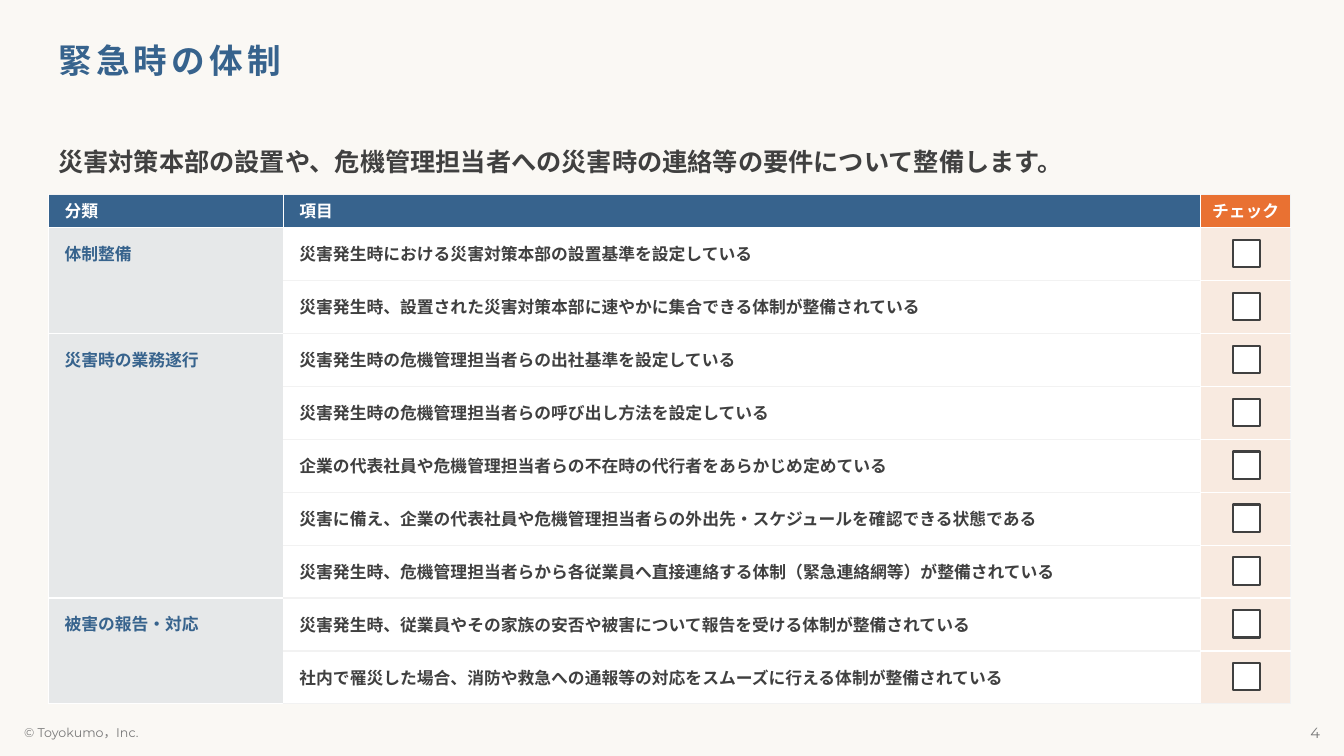
from itertools import accumulate

from lxml import etree
from pptx import Presentation
from pptx import util as u
from pptx.dml import color
from pptx.enum import shapes, text
from pptx.oxml import ns

FONT = "Montserrat"
COLORS = {
    "page": "FAF8F4", "blue": "37638D", "orange": "E97132", "ink": "404040",
    "grey": "797979", "white": "FFFFFF", "rule": "F2F2F2",
}
COLUMNS = [2.33, 9.1, 0.89]
HEADER_HEIGHT, ROW_HEIGHT = 0.33, 0.525
HEADERS = ["分類", "項目", "チェック"]
CHECKLIST = {
    "体制整備": [
        "災害発生時における災害対策本部の設置基準を設定している",
        "災害発生時、設置された災害対策本部に速やかに集合できる体制が整備されている",
    ],
    "災害時の業務遂行": [
        "災害発生時の危機管理担当者らの出社基準を設定している",
        "災害発生時の危機管理担当者らの呼び出し方法を設定している",
        "企業の代表社員や危機管理担当者らの不在時の代行者をあらかじめ定めている",
        "災害に備え、企業の代表社員や危機管理担当者らの外出先・スケジュールを確認できる状態である",
        "災害発生時、危機管理担当者らから各従業員へ直接連絡する体制（緊急連絡網等）が整備されている",
    ],
    "被害の報告・対応": [
        "災害発生時、従業員やその家族の安否や被害について報告を受ける体制が整備されている",
        "社内で罹災した場合、消防や救急への通報等の対応をスムーズに行える体制が整備されている",
    ],
}


def rgb(name):
    return color.RGBColor.from_string(COLORS[name])


def write(frame, words, size=12, ink="ink", bold=True, align=None, tracking=None, leading=None):
    """Fill a text frame with one formatted paragraph."""
    para = frame.paragraphs[0]
    if align:
        para.alignment = align
    if leading:
        para.line_spacing = leading
    span = para.add_run()
    span.text = words
    span.font.name, span.font.size, span.font.bold = FONT, u.Pt(size), bold
    span.font.color.rgb = rgb(ink)
    properties = span.font._element
    etree.SubElement(properties, ns.qn("a:ea"), typeface=FONT)
    if tracking:
        properties.set("spc", str(tracking * 100))


def add_text(page, box, words, margin_top=0.05, **style):
    frame = page.shapes.add_textbox(*map(u.Inches, box)).text_frame
    frame.word_wrap = True
    frame.vertical_anchor = text.MSO_ANCHOR.MIDDLE
    frame.margin_top = u.Inches(margin_top)
    write(frame, words, **style)


def set_borders(cell, left, right, top, bottom):
    properties = cell._tc.get_or_add_tcPr()
    for side, name in zip("LRTB", (left, right, top, bottom)):
        line = etree.SubElement(properties, ns.qn(f"a:ln{side}"), w=str(u.Pt(1)))
        fill = etree.SubElement(line, ns.qn("a:solidFill"))
        etree.SubElement(fill, ns.qn("a:srgbClr"), val=COLORS[name])


def fill_cell(cell, name, percent=100):
    cell.fill.solid()
    cell.fill.fore_color.rgb = rgb(name)
    if percent < 100:
        tint = cell._tc.tcPr.find(".//" + ns.qn("a:solidFill") + "[last()]/" + ns.qn("a:srgbClr"))
        tint = cell._tc.tcPr.find(ns.qn("a:solidFill")).find(ns.qn("a:srgbClr"))
        etree.SubElement(tint, ns.qn("a:alpha"), val=str(percent * 1000))


def set_margins(cell, left, top, right, bottom):
    cell.margin_left, cell.margin_top = u.Inches(left), u.Inches(top)
    cell.margin_right, cell.margin_bottom = u.Inches(right), u.Inches(bottom)


def add_checkbox(page, left, top, size=0.27):
    box = page.shapes.add_shape(shapes.MSO_SHAPE.ROUNDED_RECTANGLE,
                                *map(u.Inches, (left, top, size, size)))
    box.adjustments[0] = 0
    box.shadow.inherit = False
    box.fill.solid()
    box.fill.fore_color.rgb = rgb("white")
    box.line.color.rgb = rgb("ink")
    box.line.width = u.Pt(1.5)


def add_checklist(page, left, top):
    items = [item for group in CHECKLIST.values() for item in group]
    last = len(items)
    height = HEADER_HEIGHT + ROW_HEIGHT * last
    table = page.shapes.add_table(last + 1, len(COLUMNS), *map(
        u.Inches, (left, top, sum(COLUMNS), height))).table
    table.first_row = table.horz_banding = False
    for column, width in zip(table.columns, COLUMNS):
        column.width = u.Inches(width)
    for number, row in enumerate(table.rows):
        row.height = u.Inches(ROW_HEIGHT if number else HEADER_HEIGHT)

    # Cell borders and fills
    for number in range(last + 1):
        for index, name in enumerate(["blue", "white", "orange"]):
            cell = table.cell(number, index)
            inner = "rule" if index == 1 else "white"
            set_borders(
                cell, "white", "rule" if index == 2 else "white",
                "rule" if number == 0 else "white" if number == 1 else inner,
                "rule" if number == last else "white" if number == 0 else inner)
            if number == 0:
                fill_cell(cell, "orange" if index == 2 else "blue")
            else:
                fill_cell(cell, name, 100 if index == 1 else 10)

    # Header row
    for index, words in enumerate(HEADERS):
        cell = table.cell(0, index)
        cell.vertical_anchor = text.MSO_ANCHOR.MIDDLE
        set_margins(cell, 0.1 if index == 2 else 0.16, 0.05, 0.1, 0.05)
        write(cell.text_frame, words, ink="white",
              align=text.PP_ALIGN.CENTER if index == 2 else None)

    # Categories spanning their items
    starts = accumulate(map(len, CHECKLIST.values()), initial=1)
    for start, (category, group) in zip(starts, CHECKLIST.items()):
        cell = table.cell(start, 0)
        cell.merge(table.cell(start + len(group) - 1, 0))
        set_margins(cell, 0.16, 0.16, 0.01, 0)
        write(cell.text_frame, category, ink="blue")

    # Items and checkboxes
    for number, item in enumerate(items):
        cell = table.cell(number + 1, 1)
        cell.vertical_anchor = text.MSO_ANCHOR.MIDDLE
        set_margins(cell, 0.16, 0.01, 0.01, 0)
        write(cell.text_frame, item)
        add_checkbox(page, left + sum(COLUMNS[:2]) + 0.32,
                     top + HEADER_HEIGHT + number * ROW_HEIGHT + 0.12)


def add_heading(page, left, top, width):
    add_text(page, (left, top, width, 0.66), "緊急時の体制", margin_top=0.08,
             size=24, ink="blue", tracking=3, leading=0.9)
    add_text(page, (left, top + 0.99, width, 0.66),
             "災害対策本部の設置や、危機管理担当者への災害時の連絡等の要件について整備します。", size=18)


def add_footer(page, top, height):
    add_text(page, (0.14, top, 3.92, height), "© Toyokumo，Inc.",
             size=9, ink="grey", bold=False)
    add_text(page, (10.19, top, 3, height), "4", size=10.5, ink="grey",
             bold=False, align=text.PP_ALIGN.RIGHT)


def main():
    deck = Presentation()
    deck.slide_width, deck.slide_height = u.Inches(13.33), u.Inches(7.5)
    page = deck.slides.add_slide(deck.slide_layouts[6])
    page.background.fill.solid()
    page.background.fill.fore_color.rgb = rgb("page")
    add_heading(page, 0.48, 0.28, 12.33)
    add_footer(page, 7.13, 0.27)
    add_checklist(page, 0.48, 1.93)
    deck.save("out.pptx")


if __name__ == "__main__":
    main()
